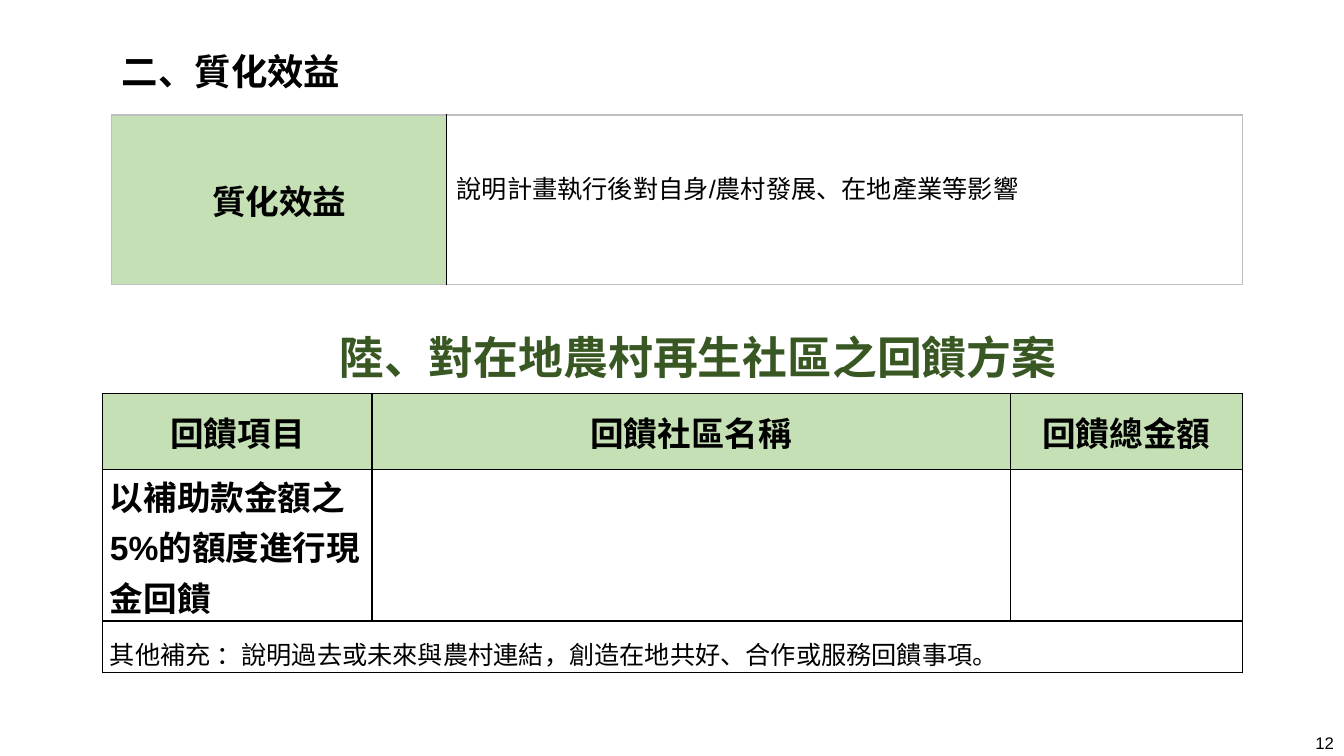
from dataclasses import dataclass

from lxml.etree import SubElement
from pptx import Presentation
from pptx.dml.color import RGBColor
from pptx.enum.text import MSO_ANCHOR, MSO_AUTO_SIZE, PP_ALIGN
from pptx.oxml.ns import qn
from pptx.util import Inches, Pt

BLACK = RGBColor(0x00, 0x00, 0x00)
WHITE = RGBColor(0xFF, 0xFF, 0xFF)
GREY = RGBColor(0xBF, 0xBF, 0xBF)
LIGHT_GREEN = RGBColor(0xC5, 0xE0, 0xB4)
DARK_GREEN = RGBColor(0x38, 0x57, 0x23)
CJK_FONT = "Noto Sans CJK SC"
LATIN_FONT = "Arial"


@dataclass
class Style:
    size: int
    bold: bool = False
    align: PP_ALIGN = PP_ALIGN.LEFT
    color: RGBColor = BLACK
    font: str = LATIN_FONT
    line_pt: int | None = None


@dataclass
class CellSpec:
    text: str
    style: Style
    fill: RGBColor = WHITE


@dataclass
class TableSpec:
    left: float
    top: float
    cols: list[float]
    rows: list[float]
    cells: list[list[CellSpec]]
    margins: dict[str, float]
    frame: RGBColor = BLACK


def write(tf, text: str, style: Style) -> None:
    p = tf.paragraphs[0]
    p.alignment = style.align
    if style.line_pt:
        p.line_spacing = Pt(style.line_pt)
    r = p.add_run()
    r.text = text
    formats = {"size": Pt(style.size), "bold": style.bold, "name": style.font}
    for name, value in formats.items():
        setattr(r.font, name, value)
    r.font.color.rgb = style.color
    SubElement(r.font._element, qn("a:ea"), typeface=CJK_FONT)


def add_text(slide, box: tuple, text: str, style: Style, anchor: MSO_ANCHOR) -> None:
    tf = slide.shapes.add_textbox(*map(Inches, box)).text_frame
    tf.word_wrap = True
    tf.vertical_anchor = anchor
    write(tf, text, style)


def add_border(cell, side: str, color: RGBColor) -> None:
    ln = SubElement(cell._tc.get_or_add_tcPr(), qn(f"a:ln{side}"), w=str(Pt(1)))
    fill = SubElement(ln, qn("a:solidFill"))
    SubElement(fill, qn("a:srgbClr"), val=str(color))


def add_table(slide, spec: TableSpec):
    n_rows, n_cols = len(spec.rows), len(spec.cols)
    box = (spec.left, spec.top, sum(spec.cols), sum(spec.rows))
    table = slide.shapes.add_table(n_rows, n_cols, *map(Inches, box)).table
    table.first_row = table.horz_banding = False
    for col, width in zip(table.columns, spec.cols):
        col.width = Inches(width)
    for row, height in zip(table.rows, spec.rows):
        row.height = Inches(height)
    for i in range(n_rows):
        for j in range(n_cols):
            cell = table.cell(i, j)
            outer = {"L": j == 0, "R": j == n_cols - 1,
                     "T": i == 0, "B": i == n_rows - 1}
            for side, on_frame in outer.items():
                add_border(cell, side, spec.frame if on_frame else BLACK)
            cell.fill.solid()
            cell.fill.fore_color.rgb = WHITE
            cell.vertical_anchor = MSO_ANCHOR.MIDDLE
            for name, value in spec.margins.items():
                setattr(cell, f"margin_{name}", Inches(value))
    for i, row in enumerate(spec.cells):
        for j, item in enumerate(row):
            cell = table.cell(i, j)
            cell.fill.fore_color.rgb = item.fill
            write(cell.text_frame, item.text, item.style)
    return table


def add_title(slide, box: tuple, text: str, style: Style) -> None:
    title = slide.shapes.title
    for name, value in zip(("left", "top", "width", "height"), box):
        setattr(title, name, Inches(value))
    tf = title.text_frame
    tf.auto_size = MSO_AUTO_SIZE.NONE
    tf.vertical_anchor = MSO_ANCHOR.MIDDLE
    write(tf, text, style)


def main() -> None:
    prs = Presentation()
    prs.slide_width, prs.slide_height = Inches(13.33), Inches(7.5)
    slide = prs.slides.add_slide(prs.slide_layouts[5])

    center = PP_ALIGN.CENTER
    add_title(slide, (0.26, 3.22, 13.33, 0.64), "陸、對在地農村再生社區之回饋方案",
              Style(32, True, center, DARK_GREEN, CJK_FONT))
    add_text(slide, (1.11, 0.57, 5.32, 0.42), "二、質化效益",
             Style(26, True, font=CJK_FONT, line_pt=22), MSO_ANCHOR.TOP)
    add_text(slide, (10.33, 7.23, 3, 0.27), "12",
             Style(12, align=PP_ALIGN.RIGHT), MSO_ANCHOR.MIDDLE)

    benefit = add_table(slide, TableSpec(
        1.11, 1.14, [3.32, 7.89], [1.68],
        [[CellSpec("質化效益", Style(24, True, center), LIGHT_GREEN),
          CellSpec("說明計畫執行後對自身/農村發展、在地產業等影響", Style(18))]],
        {"left": 0.1, "right": 0.1, "top": 0.05, "bottom": 0.05}, GREY))
    benefit.cell(0, 1).margin_bottom = Inches(0.3)

    header = Style(24, True, center, line_pt=36)
    feedback = add_table(slide, TableSpec(
        1.02, 3.9, [2.67, 6.33, 2.3], [0.76, 1.5, 0.51],
        [[CellSpec(text, header, LIGHT_GREEN)
          for text in ("回饋項目", "回饋社區名稱", "回饋總金額")],
         [CellSpec("以補助款金額之5%的額度進行現金回饋", Style(24, True, line_pt=36))],
         [CellSpec("其他補充 ：說明過去或未來與農村連結，創造在地共好、合作或服務回饋事項。",
                   Style(18, line_pt=36))]],
        {"left": 0.07, "right": 0.07, "top": 0, "bottom": 0}))
    feedback.cell(2, 0).merge(feedback.cell(2, 2))

    prs.save("out.pptx")


if __name__ == "__main__":
    main()
